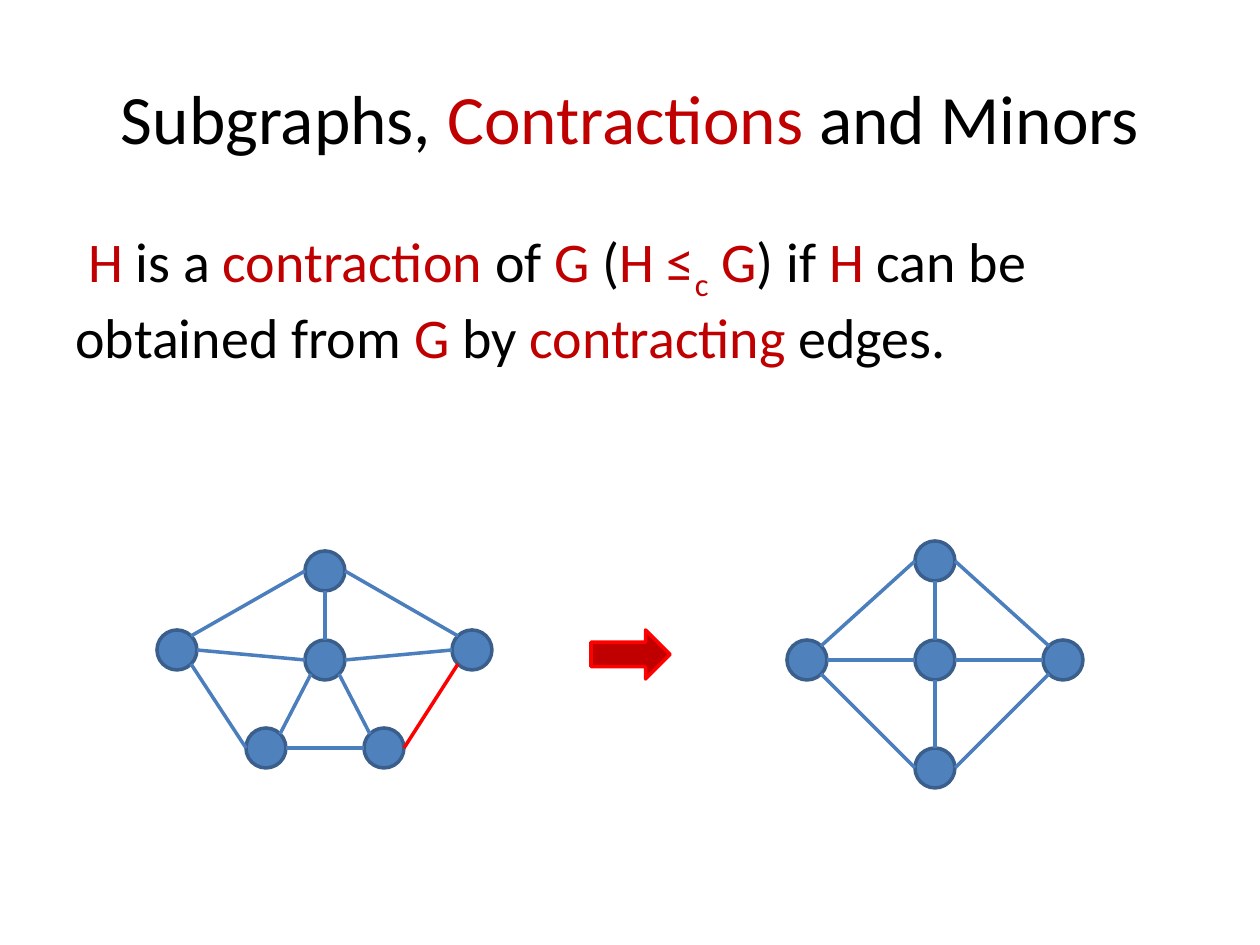
from pptx import Presentation
from pptx import util as u
from pptx.dml.color import RGBColor
from pptx.enum import shapes, text
from pptx.oxml.ns import qn
from lxml import etree

# Content
BLACK, RED, BRIGHT_RED = "000000", "C00000", "FF0000"
NODE_FILL, NODE_LINE, EDGE = "4F81BD", "3A5F8C", "4B7EBC"

TITLE = [("Subgraphs, ", BLACK), ("Contractions", RED), (" and Minors", BLACK)]
DEFINITION = [
    (" ", BLACK), ("H", RED), (" is a ", BLACK), ("contraction", RED),
    (" of ", BLACK), ("G", RED), (" (", BLACK), ("H ≤", RED),
    ("c", RED, "subscript"), (" G", RED), (") if ", BLACK), ("H", RED),
    (" can be obtained from ", BLACK), ("G", RED), (" by ", BLACK),
    ("contracting", RED), (" edges.", BLACK),
]

# Node centres in px; edges run from a side of one node to a side of another
WHEEL_EDGES = [
    ("left", "NE", "top", "W"), ("right", "NW", "top", "E"),
    ("hub", "N", "top", "S"), ("left", "E", "hub", "W"),
    ("right", "W", "hub", "E"),
]
GRAPHS = [
    {
        "nodes": {"top": (325, 571), "right": (472, 650), "low left": (266, 748),
                  "low right": (384, 748), "left": (177, 650), "hub": (325, 660)},
        "edges": WHEEL_EDGES + [
            ("left", "SE", "low left", "W"), ("low left", "E", "low right", "W"),
            ("low left", "NE", "hub", "SW"), ("low right", "NW", "hub", "SE"),
            ("low right", "E", "right", "SW", BRIGHT_RED),
        ],
    },
    {
        "nodes": {"top": (935, 561), "bottom": (935, 768), "right": (1063, 660),
                  "left": (807, 660), "hub": (935, 660)},
        "edges": WHEEL_EDGES + [
            ("left", "SE", "bottom", "W"), ("bottom", "E", "right", "SW"),
            ("bottom", "N", "hub", "S"),
        ],
    },
]
TITLE_AREA = (63, 38, 1134, 157)
BODY_AREA = (63, 220, 1134, 624)
ARROW_AREA = (591, 630, 79, 49)
RADIUS, DIAGONAL = 20, 14
PX = u.Inches(1) / 126


def px(*values):
    return [round(value * PX) for value in values]


def color(value):
    return RGBColor.from_string(value)


def write(box, spans, size, **paragraph_format):
    frame = box.text_frame
    frame.word_wrap = True
    frame.auto_size = text.MSO_AUTO_SIZE.NONE
    para = frame.paragraphs[0]
    for name, value in paragraph_format.items():
        setattr(para, name, value)
    for words, hue, *style in spans:
        span = para.add_run()
        span.text = words
        for name, value in {"name": "Calibri", "size": u.Pt(size)}.items():
            setattr(span.font, name, value)
        span.font.color.rgb = color(hue)
        if style:
            span._r.get_or_add_rPr().set("baseline", "-25000")


def outline(item, hue):
    item.line.color.rgb = color(hue)
    item.line.width = u.Pt(2)


def add_solid(page, kind, area, fill, line):
    shape = page.shapes.add_shape(kind, *px(*area))
    shape.shadow.inherit = False
    shape.fill.solid()
    shape.fill.fore_color.rgb = color(fill)
    outline(shape, line)


def side(center, direction):
    reach = DIAGONAL if len(direction) == 2 else RADIUS
    x, y = center
    return (x + reach * (("E" in direction) - ("W" in direction)),
            y + reach * (("S" in direction) - ("N" in direction)))


def add_graph(page, nodes, edges):
    for x, y in nodes.values():
        area = (x - RADIUS, y - RADIUS, 2 * RADIUS, 2 * RADIUS)
        add_solid(page, shapes.MSO_SHAPE.OVAL, area, NODE_FILL, NODE_LINE)
    for start, start_side, end, end_side, *hue in edges:
        points = side(nodes[start], start_side) + side(nodes[end], end_side)
        edge = page.shapes.add_connector(shapes.MSO_CONNECTOR.STRAIGHT, *px(*points))
        outline(edge, hue[0] if hue else EDGE)
        etree.SubElement(edge._element.spPr, qn("a:effectLst"))


def main():
    deck = Presentation()
    deck.slide_width, deck.slide_height = u.Inches(10), u.Inches(7.5)
    page = deck.slides.add_slide(deck.slide_layouts[5])

    # Title and definition
    title = page.shapes.title
    title.left, title.top, title.width, title.height = px(*TITLE_AREA)
    title.text_frame.vertical_anchor = text.MSO_ANCHOR.MIDDLE
    write(title, TITLE, 39.6, alignment=text.PP_ALIGN.CENTER)
    body = page.shapes.add_textbox(*px(*BODY_AREA))
    write(body, DEFINITION, 32, space_before=u.Pt(6.4))

    # Graph before and after contracting the red edge
    for graph in GRAPHS:
        add_graph(page, **graph)
    add_solid(page, shapes.MSO_SHAPE.RIGHT_ARROW, ARROW_AREA, RED, BRIGHT_RED)

    deck.save("out.pptx")


if __name__ == "__main__":
    main()
